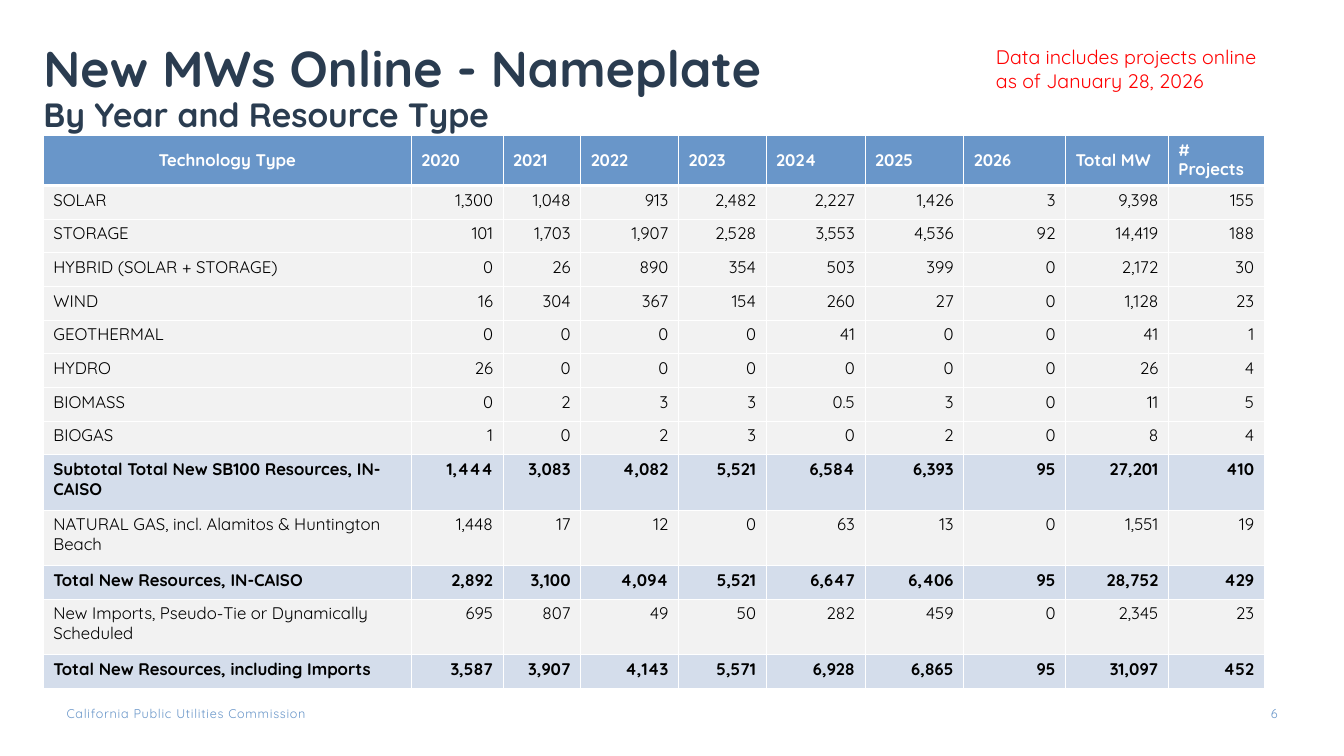
from lxml.etree import SubElement
from pptx import Presentation
from pptx.dml.color import RGBColor
from pptx.enum.text import MSO_ANCHOR, PP_ALIGN
from pptx.oxml.ns import qn
from pptx.util import Emu, Inches, Pt

FONT = "Quicksand"
BLUE, NAVY, RED = "6996C9", "2A3C50", "FF0000"
WHITE, BLACK, GREY, PALE = "FFFFFF", "000000", "F2F2F2", "D4DDEB"

COLUMN_WIDTHS = [3.65, 0.91, 0.77, 0.97, 0.87, 0.98, 0.98, 1.01, 1.02, 0.95]
HEADER_HEIGHT, TALL_HEIGHT = 0.5, 0.55
YEARS = [str(year) for year in range(2020, 2027)]
HEADINGS = ["Technology Type", *YEARS, "Total MW", "# Projects"]
RESOURCES = [
    ("SOLAR", "1,300 1,048 913 2,482 2,227 1,426 3 9,398 155"),
    ("STORAGE", "101 1,703 1,907 2,528 3,553 4,536 92 14,419 188"),
    ("HYBRID (SOLAR + STORAGE)", "0 26 890 354 503 399 0 2,172 30"),
    ("WIND", "16 304 367 154 260 27 0 1,128 23"),
    ("GEOTHERMAL", "0 0 0 0 41 0 0 41 1"),
    ("HYDRO", "26 0 0 0 0 0 0 26 4"),
    ("BIOMASS", "0 2 3 3 0.5 3 0 11 5"),
    ("BIOGAS", "1 0 2 3 0 2 0 8 4"),
    ("Subtotal Total New SB100 Resources, IN-CAISO",
     "1,444 3,083 4,082 5,521 6,584 6,393 95 27,201 410"),
    ("NATURAL GAS, incl. Alamitos & Huntington Beach",
     "1,448 17 12 0 63 13 0 1,551 19"),
    ("Total New Resources, IN-CAISO",
     "2,892 3,100 4,094 5,521 6,647 6,406 95 28,752 429"),
    ("New Imports, Pseudo-Tie or Dynamically Scheduled",
     "695 807 49 50 282 459 0 2,345 23"),
    ("Total New Resources, including Imports",
     "3,587 3,907 4,143 5,571 6,928 6,865 95 31,097 452"),
]


def rgb(value):
    """Turn a hex string into a colour."""
    return RGBColor.from_string(value)


def write(paragraph, text, size=12, color=BLACK, bold=False, align=PP_ALIGN.LEFT,
          leading=None, tracking=0):
    """Add formatted text to a paragraph, with a line break at each newline."""
    paragraph.alignment = align
    if leading:
        paragraph.line_spacing = leading
    for index, line in enumerate(text.split("\n")):
        if index:
            paragraph.add_line_break()
        if line:
            run = paragraph.add_run()
            run.text = line
            run.font.name, run.font.size, run.font.bold = FONT, Pt(size), bold
            run.font.color.rgb = rgb(color)
            if tracking:
                run.font._element.set("spc", str(int(tracking * 100)))


def text_area(slide, box, margins=(0, 0, 0, 0), anchor=MSO_ANCHOR.TOP):
    """Add a wrapping text box and return its first paragraph."""
    frame = slide.shapes.add_textbox(*map(Inches, box)).text_frame
    frame.word_wrap, frame.vertical_anchor = True, anchor
    (frame.margin_left, frame.margin_top,
     frame.margin_right, frame.margin_bottom) = map(Inches, margins)
    return frame.paragraphs[0]


def add_title(slide, box):
    """Place the title and its smaller second line at the foot of the box."""
    title = text_area(slide, box, (0, 0.05, 0.1, 0.05), MSO_ANCHOR.BOTTOM)
    style = dict(color=NAVY, bold=True, leading=0.9)
    write(title, "New MWs Online - Nameplate\n", size=36, **style)
    write(title, "By Year and Resource Type", size=24, **style)


def add_date_note(slide, box):
    """Place the red note on the date of the data."""
    note = text_area(slide, box, (0.1, 0.05, 0.1, 0.05))
    write(note, "Data includes projects online\nas of January 28, 2026", size=14, color=RED)


def add_footer(slide, box):
    """Place the agency at the left of the box and the page number at its right."""
    left, top, width, height = box
    number_width = 0.42
    agency = text_area(slide, (left, top, 3.21, height))
    write(agency, "California Public Utilities Commission", size=9, color=BLUE, tracking=0.5)
    number = text_area(slide, (left + width - number_width, top, number_width, height))
    write(number, "6", size=9, color=BLUE, align=PP_ALIGN.RIGHT)


def style_cell(cell, fill, top=0.75, bottom=0.75):
    """Give a cell white borders and a plain fill."""
    properties = cell._tc.get_or_add_tcPr()
    for side, width in (("L", 0.75), ("R", 0.75), ("T", top), ("B", bottom)):
        border = SubElement(properties, qn(f"a:ln{side}"), w=str(Pt(width)))
        SubElement(SubElement(border, qn("a:solidFill")), qn("a:srgbClr"), val=WHITE)
    cell.fill.solid()
    cell.fill.fore_color.rgb = rgb(fill)


def add_capacity_table(slide, box):
    """Place the table of megawatts by resource and year."""
    table = slide.shapes.add_table(
        len(RESOURCES) + 1, len(HEADINGS), *map(Inches, box)).table
    for column, share in zip(table.columns, COLUMN_WIDTHS):
        column.width = Emu(int(Inches(box[2]) * share / sum(COLUMN_WIDTHS)))

    tall = [len(resource) > 40 for resource, _ in RESOURCES]
    plain_height = (box[3] - HEADER_HEIGHT - TALL_HEIGHT * sum(tall)) / tall.count(False)
    table.rows[0].height = Inches(HEADER_HEIGHT)
    for column, heading in enumerate(HEADINGS):
        cell = table.cell(0, column)
        cell.vertical_anchor = MSO_ANCHOR.MIDDLE
        style_cell(cell, BLUE, bottom=2.13)
        write(cell.text_frame.paragraphs[0], heading, color=WHITE, bold=True,
              align=PP_ALIGN.LEFT if column else PP_ALIGN.CENTER, leading=Pt(14.2))

    for row, (resource, amounts) in enumerate(RESOURCES, 1):
        table.rows[row].height = Inches(TALL_HEIGHT if tall[row - 1] else plain_height)
        is_total = "Total" in resource
        for column, entry in enumerate([resource, *amounts.split()]):
            cell = table.cell(row, column)
            style_cell(cell, PALE if is_total else GREY, top=2.13 if row == 1 else 0.75)
            write(cell.text_frame.paragraphs[0], entry, bold=is_total,
                  align=PP_ALIGN.RIGHT if column else PP_ALIGN.LEFT, leading=Pt(14.2))


def main():
    """Build the slide and save it."""
    deck = Presentation()
    deck.slide_width, deck.slide_height = Inches(13.33), Inches(7.5)
    slide = deck.slides.add_slide(deck.slide_layouts[6])
    add_footer(slide, (0.66, 7, 12.01, 0.2))
    add_title(slide, (0.43, -0.06, 12, 1.45))
    add_capacity_table(slide, (0.43, 1.34, 12.11, 5.49))
    add_date_note(slide, (9.78, 0.4, 3.5, 0.88))
    deck.save("out.pptx")


if __name__ == "__main__":
    main()
